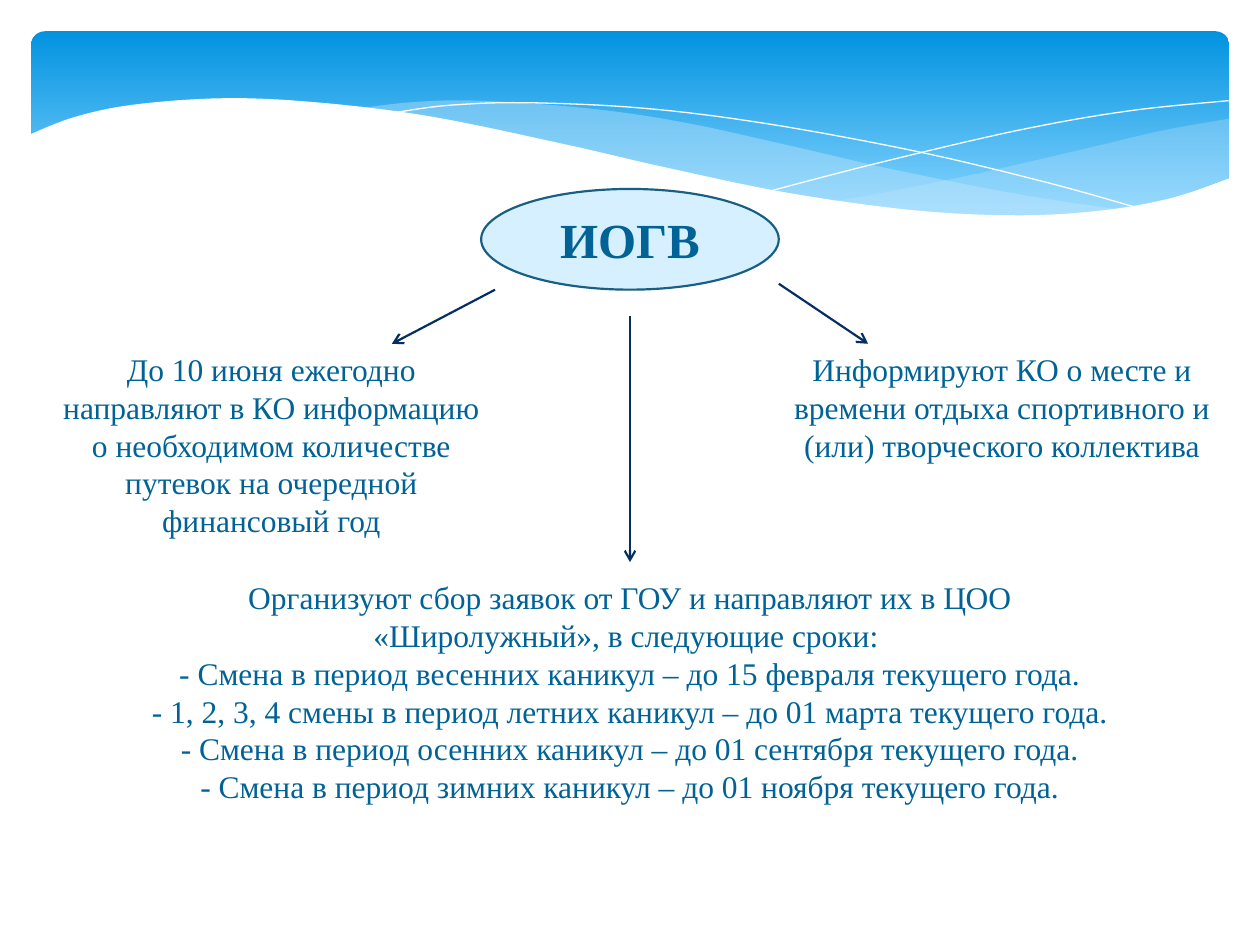
from lxml.etree import SubElement
from pptx import Presentation
from pptx.dml.color import RGBColor
from pptx.enum.shapes import MSO_CONNECTOR, MSO_SHAPE
from pptx.enum.text import MSO_ANCHOR, MSO_AUTO_SIZE, PP_ALIGN
from pptx.oxml.ns import qn
from pptx.util import Cm, Pt

INK = "016296"
STEPS = 8

LIGHT = [
    [(24.79, 2.39), (23.39, 2.64), (21.87, 3), (19.79, 3.48), (17.93, 3.86),
     (16.79, 4.06)],
    [(16.79, 4.06), (18.59, 4.27), (20.4, 4.37), (21.92, 4.32), (23.39, 4.06),
     (24.79, 3.58)],
]
MIDDLE = [
    [(22.68, 4.24), (20.5, 3.91), (17.93, 3.4), (15.98, 2.95), (13.74, 2.46),
     (11.81, 2.18), (9.65, 2.03), (8.33, 2.06), (7.26, 2.18)],
    [(7.26, 2.18), (9.19, 2.46), (11.4, 2.95), (14.38, 3.63), (16.51, 4.01),
     (18.69, 4.29), (20.78, 4.39), (22.68, 4.24)],
]
FALL = [(7.85, 2.29), (8.97, 2.13), (10.57, 2.07), (12.95, 2.18), (15.44, 2.49),
        (18.47, 3.05), (21.11, 3.68), (23.04, 4.22)]
RISE = [(15.57, 3.84), (17.65, 3.3), (20.47, 2.64), (22.73, 2.24), (24.77, 2.03)]
FRONT = [
    [(24.82, 3.58), (23.62, 3.99), (22.23, 4.24), (20.55, 4.34), (18.44, 4.24),
     (15.9, 3.89), (13.44, 3.38), (11.35, 2.9), (8.64, 2.34), (6.35, 2.06),
     (4.5, 1.98), (2.69, 2.11), (1.5, 2.36), (0.58, 2.72)],
    [(0.58, 5.69), (24.82, 5.69)],
]

LEFT = ["До 10 июня ежегодно направляют в КО информацию о необходимом "
        "количестве путевок на очередной финансовый год"]
RIGHT = ["Информируют КО о месте и времени отдыха спортивного и (или) "
         "творческого коллектива"]
TERMS = [
    "Организуют сбор заявок от ГОУ и направляют их в ЦОО «Широлужный», "
    "в следующие сроки: ",
    "- Смена в период весенних каникул – до 15 февраля текущего года.",
    "- 1, 2, 3, 4 смены в период летних каникул – до 01 марта текущего года.",
    "- Смена в период осенних каникул – до 01 сентября текущего года.",
    "- Смена в период зимних каникул – до 01 ноября текущего года.",
]


def color(code):
    """Turn a hex string into a colour."""
    return RGBColor.from_string(code)


def paint(shape, code, alpha=100):
    """Fill a shape with one colour at the given percent of opacity."""
    shape.fill.solid()
    shape.fill.fore_color.rgb = color(code)
    if alpha < 100:
        tint = shape.fill._xPr.find(qn("a:solidFill"))[0]
        SubElement(tint, qn("a:alpha"), val=str(alpha * 1000))


def stroke(shape, code, width):
    """Set the colour and width of a line."""
    shape.line.color.rgb = color(code)
    shape.line.width = Pt(width)


def smooth(knots):
    """Sample a Catmull-Rom curve through the knots."""
    ends = [knots[0], *knots, knots[-1]]
    dots = [knots[0]]
    for a, b, c, d in zip(ends, ends[1:], ends[2:], ends[3:]):
        for step in range(1, STEPS + 1):
            t = step / STEPS
            dots.append(tuple(
                q + t / 2 * (r - p + t * (2 * p - 5 * q + 4 * r - s
                                          + t * (3 * (q - r) + s - p)))
                for p, q, r, s in zip(a, b, c, d)))
    return dots


def trace(slide, curves, close):
    """Draw an outline that joins smooth curves."""
    dots = [(Cm(x), Cm(y)) for knots in curves for x, y in smooth(knots)]
    pen = slide.shapes.build_freeform(*dots[0])
    pen.add_line_segments(dots[1:], close=close)
    shape = pen.convert_to_shape()
    shape.shadow.inherit = False
    return shape


def add_wave(slide, curves, code, alpha=100):
    """Add a filled wave without an outline."""
    wave = trace(slide, curves, True)
    paint(wave, code, alpha)
    wave.line.fill.background()


def add_thread(slide, knots):
    """Add a thin white curve."""
    thread = trace(slide, [knots], False)
    thread.fill.background()
    stroke(thread, "FFFFFF", 0)


def add_band(slide):
    """Add the rounded gradient band at the top."""
    band = slide.shapes.add_shape(
        MSO_SHAPE.ROUNDED_RECTANGLE, Cm(0.63), Cm(0.63), Cm(24.15), Cm(3.96))
    band.adjustments[0] = 0.07
    band.shadow.inherit = False
    band.line.fill.background()
    band.fill.gradient()
    band.fill.gradient_angle = 270
    looks = [(0, "0293E0"), (0.9, "83D3FE")]
    for stop, (place, code) in zip(band.fill.gradient_stops, looks):
        stop.position = place
        stop.color.rgb = color(code)


def write(frame, lines, size, bold=False):
    """Put centred paragraphs into a text frame."""
    frame.word_wrap = True
    frame.text = "\n".join(lines)
    for para in frame.paragraphs:
        para.alignment = PP_ALIGN.CENTER
        for run in para.runs:
            run.font.name = "Times New Roman"
            run.font.size = Pt(size)
            run.font.bold = bold
            run.font.color.rgb = color(INK)


def add_oval(slide, text):
    """Add the central oval with its label."""
    oval = slide.shapes.add_shape(
        MSO_SHAPE.OVAL, Cm(9.7), Cm(3.81), Cm(6), Cm(2.03))
    oval.shadow.inherit = False
    paint(oval, "D6F0FF")
    stroke(oval, "195F84", 1.25)
    write(oval.text_frame, [text], 28, True)
    oval.text_frame.vertical_anchor = MSO_ANCHOR.MIDDLE


def add_note(slide, lines, left, top, width, height):
    """Add a text box that fits its lines."""
    box = slide.shapes.add_textbox(Cm(left), Cm(top), Cm(width), Cm(height))
    write(box.text_frame, lines, 18)
    box.text_frame.auto_size = MSO_AUTO_SIZE.SHAPE_TO_FIT_TEXT


def add_arrow(slide, *ends):
    """Add a straight arrow between two points."""
    arrow = slide.shapes.add_connector(
        MSO_CONNECTOR.STRAIGHT, *[Cm(end) for end in ends])
    stroke(arrow, "052E65", 1.25)
    SubElement(arrow.line._get_or_add_ln(), qn("a:tailEnd"), type="arrow")
    SubElement(arrow._element.spPr, qn("a:effectLst"))


def main():
    """Build and save the slide."""
    deck = Presentation()
    deck.slide_width, deck.slide_height = Cm(25.4), Cm(19.05)
    slide = deck.slides.add_slide(deck.slide_layouts[6])
    add_band(slide)
    add_wave(slide, LIGHT, "C6E7FC", 29)
    add_wave(slide, MIDDLE, "C6E7FC", 40)
    add_thread(slide, FALL)
    add_thread(slide, RISE)
    add_wave(slide, FRONT, "FFFFFF")
    add_oval(slide, "ИОГВ")
    add_note(slide, LEFT, 0.97, 6.93, 9, 4.11)
    add_note(slide, TERMS, 2.6, 11.53, 20.2, 4.88)
    add_note(slide, RIGHT, 15.7, 6.93, 9, 2.57)
    add_arrow(slide, 9.98, 5.84, 7.9, 6.93)
    add_arrow(slide, 12.7, 6.38, 12.7, 11.33)
    add_arrow(slide, 15.7, 5.72, 17.5, 6.93)
    deck.save("out.pptx")


if __name__ == "__main__":
    main()
